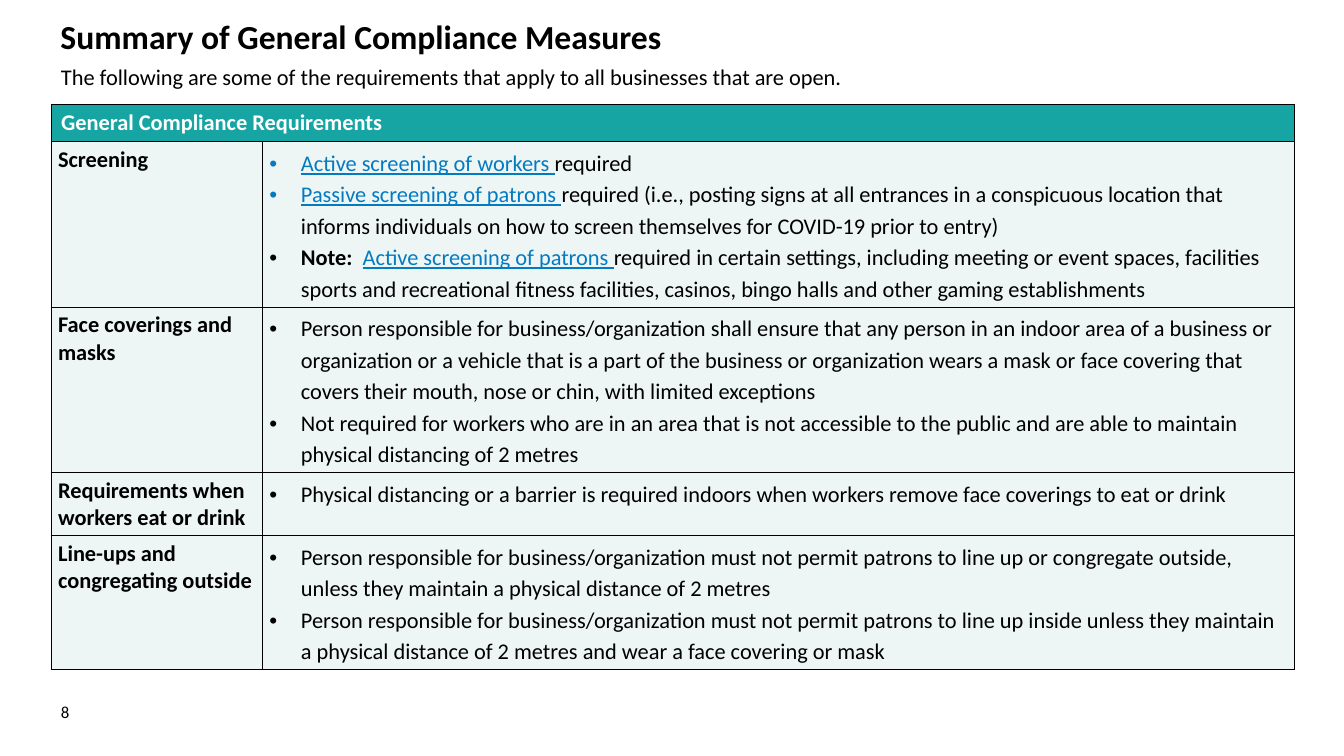
"""Build a slide that sums up general compliance measures in a table."""
import dataclasses

import lxml.etree
import pptx
import pptx.dml.color
import pptx.enum.text
import pptx.oxml.ns
import pptx.util

Pt = pptx.util.Pt
qn = pptx.oxml.ns.qn
RGB = pptx.dml.color.RGBColor.from_string
ANCHOR = pptx.enum.text.MSO_ANCHOR
ALIGN = pptx.enum.text.PP_ALIGN


@dataclasses.dataclass(frozen=True)
class Theme:
    font: str = "Calibri"
    ink: str = "000000"
    white: str = "FFFFFF"
    header: str = "16A5A3"
    body: str = "EEF5F5"
    link: str = "047BC1"
    title_size: int = 24
    text_size: int = 16
    number_size: int = 12
    bullet_indent: float = 22.5
    bullet_spacing: float = 1.15
    border: int = 1

    def formats(self, style):
        base = {"name": self.font, "size": Pt(self.text_size), "bold": False}
        extra = {
            "plain": {},
            "bold": {"bold": True},
            "title": {"bold": True, "size": Pt(self.title_size)},
            "number": {"size": Pt(self.number_size)},
            "header": {"bold": True},
            "link": {"underline": True},
        }
        colors = {"header": self.white, "link": self.link}
        return {**base, **extra[style]}, colors.get(style, self.ink)


class Deck:
    def __init__(self, theme, width, height):
        self.theme = theme
        self.prs = pptx.Presentation()
        self.prs.slide_width, self.prs.slide_height = Pt(width), Pt(height)
        self.s = self.prs.slides.add_slide(self.prs.slide_layouts[5])

    def runs(self, p, parts):
        for text, style in parts:
            r = p.add_run()
            r.text = text
            values, color = self.theme.formats(style)
            for name, value in values.items():
                setattr(r.font, name, value)
            r.font.color.rgb = RGB(color)

    def bullet(self, p):
        pPr = p._p.get_or_add_pPr()
        indent = Pt(self.theme.bullet_indent)
        pPr.set("marL", str(indent))
        pPr.set("indent", str(-indent))
        lxml.etree.SubElement(pPr, qn("a:buFont"), typeface="Arial")
        lxml.etree.SubElement(pPr, qn("a:buChar"), char="•")
        p.line_spacing = self.theme.bullet_spacing

    def fill_text(self, tf, text, style, anchor=ANCHOR.TOP):
        values = {"word_wrap": True, "vertical_anchor": anchor,
                  "auto_size": pptx.enum.text.MSO_AUTO_SIZE.NONE}
        for name, value in values.items():
            setattr(tf, name, value)
        p = tf.paragraphs[0]
        p.alignment = ALIGN.LEFT
        self.runs(p, [(text, style)])
        return p

    def title(self, box, text):
        sp = self.s.shapes.title
        for name, value in zip(("left", "top", "width", "height"), box):
            setattr(sp, name, Pt(value))
        self.fill_text(sp.text_frame, text, "title").line_spacing = 0.9

    def text(self, box, text, style, anchor=ANCHOR.TOP):
        sp = self.s.shapes.add_textbox(*map(Pt, box))
        self.fill_text(sp.text_frame, text, style, anchor)

    def cell_style(self, cell, color):
        cell.fill.solid()
        cell.fill.fore_color.rgb = RGB(color)
        tcPr = cell._tc.get_or_add_tcPr()
        for i, side in enumerate("LRTB"):
            ln = lxml.etree.Element(qn(f"a:ln{side}"), w=str(Pt(self.theme.border)))
            fill = lxml.etree.SubElement(ln, qn("a:solidFill"))
            lxml.etree.SubElement(fill, qn("a:srgbClr"), val=self.theme.ink)
            tcPr.insert(i, ln)

    def table(self, left, top, widths, heights, header, rows):
        shape = self.s.shapes.add_table(
            len(heights), len(widths), Pt(left), Pt(top), Pt(sum(widths)), Pt(sum(heights)))
        tbl = shape.table
        tbl.first_row = tbl.horz_banding = False
        for col, width in zip(tbl.columns, widths):
            col.width = Pt(width)
        for row, height in zip(tbl.rows, heights):
            row.height = Pt(height)
        for cell in tbl.rows[0].cells:
            self.cell_style(cell, self.theme.header)
        tbl.cell(0, 0).merge(tbl.cell(0, 1))
        self.runs(tbl.cell(0, 0).text_frame.paragraphs[0], [(header, "header")])
        margins = {"margin_left": 5, "margin_right": 5, "margin_top": 2.9, "margin_bottom": 2.9}
        for i, (label, bullets) in enumerate(rows, 1):
            for cell in tbl.rows[i].cells:
                self.cell_style(cell, self.theme.body)
                for name, value in margins.items():
                    setattr(cell, name, Pt(value))
            self.runs(tbl.cell(i, 0).text_frame.paragraphs[0], [(label, "bold")])
            tf = tbl.cell(i, 1).text_frame
            for j, parts in enumerate(bullets):
                p = tf.add_paragraph() if j else tf.paragraphs[0]
                self.bullet(p)
                self.runs(p, parts)


REQUIREMENTS = [
    ("Screening", [
        [("Active screening of workers ", "link"), ("required", "plain")],
        [("Passive screening of patrons ", "link"),
         ("required (i.e., posting signs at all entrances in a conspicuous location that "
          "informs individuals on how to screen themselves for COVID-19 prior to entry)", "plain")],
        [("Note:  ", "bold"), ("Active screening of patrons ", "link"),
         ("required in certain settings, including meeting or event spaces, facilities sports "
          "and recreational fitness facilities, casinos, bingo halls and other gaming "
          "establishments", "plain")],
    ]),
    ("Face coverings and masks", [
        [("Person responsible for business/organization shall ensure that any person in an "
          "indoor area of a business or organization or a vehicle that is a part of the business "
          "or organization wears a mask or face covering that covers their mouth, nose or chin, "
          "with limited exceptions", "plain")],
        [("Not required for workers who are in an area that is not accessible to the public and "
          "are able to maintain physical distancing of 2 metres", "plain")],
    ]),
    ("Requirements when workers eat or drink", [
        [("Physical distancing or a barrier is required indoors when workers remove face "
          "coverings to eat or drink", "plain")],
    ]),
    ("Line-ups and congregating outside", [
        [("Person responsible for business/organization must not permit patrons to line up or "
          "congregate outside, unless they maintain a physical distance of 2 metres", "plain")],
        [("Person responsible for business/organization must not permit patrons to line up "
          "inside unless they maintain a physical distance of 2 metres and wear a face covering "
          "or mask", "plain")],
    ]),
]


def main():
    deck = Deck(Theme(), 960, 540)
    deck.title((36, 10.8, 908.6, 40.3), "Summary of General Compliance Measures")
    deck.text((36.5, 41.8, 887.8, 30.2),
              "The following are some of the requirements that apply to all businesses that are open.",
              "plain")
    deck.table(36.5, 74.5, (151, 737), (26.5, 118, 118, 45, 95.5),
               "General Compliance Requirements", REQUIREMENTS)
    deck.text((36.5, 494, 40.3, 28.8), "8", "number", ANCHOR.MIDDLE)
    deck.prs.save("out.pptx")


if __name__ == "__main__":
    main()
